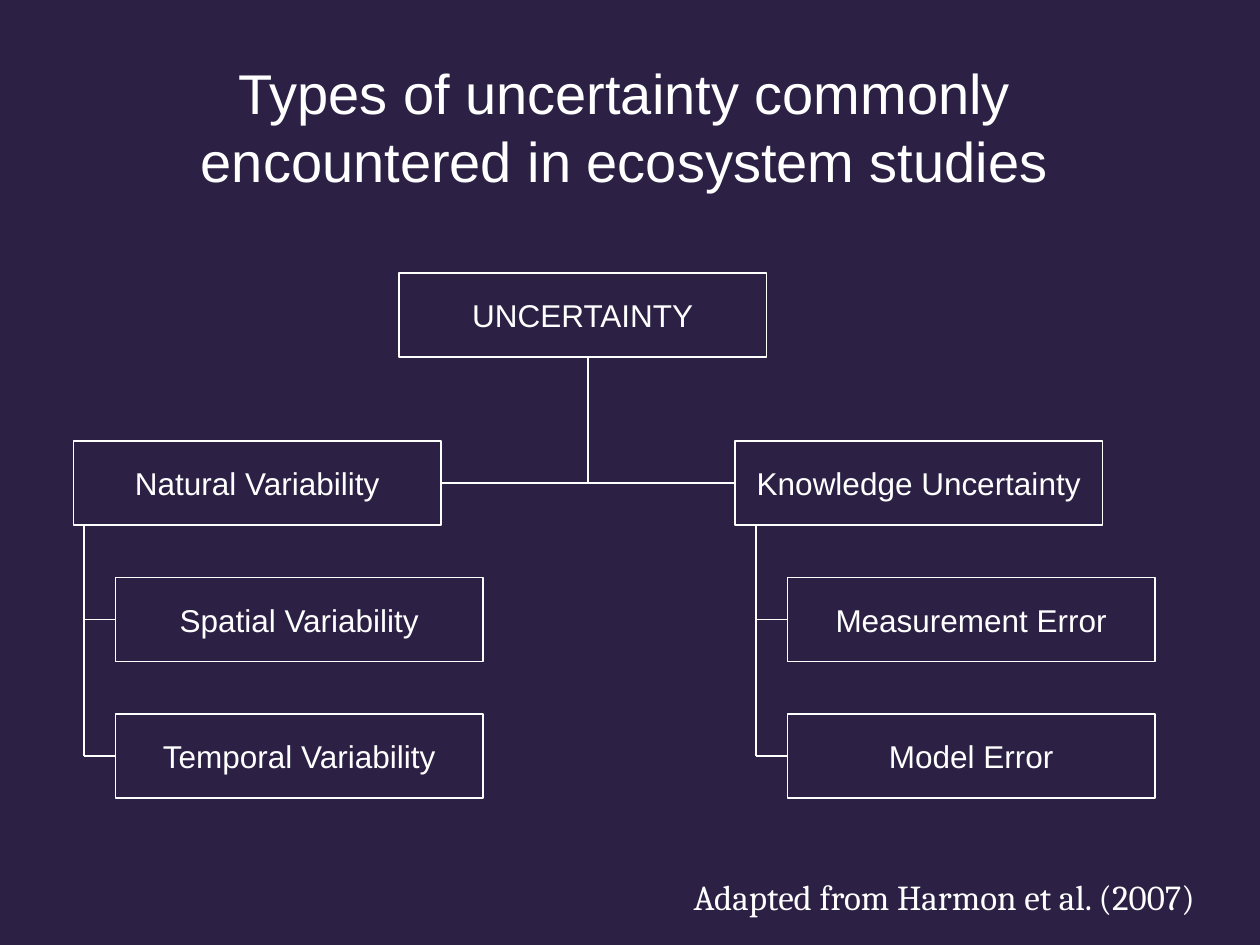
import pptx
import pptx.util
import pptx.dml.color
import pptx.enum.shapes
import pptx.enum.text
import pptx.oxml.ns
import lxml.etree
from dataclasses import dataclass

PX = 7620  # EMU per px, 120 px to the inch


@dataclass(frozen=True)
class Theme:
    background = pptx.dml.color.RGBColor(0x2C, 0x21, 0x45)
    foreground = pptx.dml.color.RGBColor(0xFF, 0xFF, 0xFF)
    line_width = pptx.util.Pt(0.75)
    sans = "Arial"
    serif = "Cambria"
    title_size = 32
    box_size = 18
    credit_size = 20


theme = Theme()
ALIGN = pptx.enum.text.PP_ALIGN
ANCHOR = pptx.enum.text.MSO_ANCHOR


def write_text(shape, text, size, font=theme.sans, align=ALIGN.CENTER,
               anchor=ANCHOR.TOP, wrap=True):
    frame = shape.text_frame
    frame.text = text
    frame.word_wrap = wrap
    frame.auto_size = pptx.enum.text.MSO_AUTO_SIZE.NONE
    frame.vertical_anchor = anchor
    paragraph = frame.paragraphs[0]
    paragraph.alignment = align
    paragraph.font.name = font
    paragraph.font.size = pptx.util.Pt(size)
    paragraph.font.color.rgb = theme.foreground


presentation = pptx.Presentation()
presentation.slide_width = 1200 * PX
presentation.slide_height = 900 * PX
slide = presentation.slides.add_slide(presentation.slide_layouts[5])
slide.background.fill.solid()
slide.background.fill.fore_color.rgb = theme.background

# Title
title = slide.shapes.title
title.left, title.top, title.width, title.height = 80 * PX, 50 * PX, 1030 * PX, 150 * PX
write_text(title, "Types of uncertainty commonly encountered in ecosystem studies",
           theme.title_size)

# Layout of the tree
BOX_WIDTH, BOX_HEIGHT = 350, 80
ROOT_LEFT, ROOT_TOP = 380, 260
BRANCH_TOP, ROW_STEP = 420, 130
TRUNK_X = 560
RAIL_GAP = 30  # from the vertical rail to the boxes it feeds

branches = [
    ("Natural Variability", 70, 110, ["Spatial Variability", "Temporal Variability"]),
    ("Knowledge Uncertainty", 700, 750, ["Measurement Error", "Model Error"]),
]

# Boxes and lines, worked out from the branches
branch_middle = BRANCH_TOP + BOX_HEIGHT // 2
boxes = [("UNCERTAINTY", ROOT_LEFT, ROOT_TOP)]
lines = [
    (TRUNK_X, ROOT_TOP + BOX_HEIGHT, TRUNK_X, branch_middle),
    (branches[0][1] + BOX_WIDTH, branch_middle, branches[1][1], branch_middle),
]
for name, branch_left, leaf_left, leaves in branches:
    boxes.append((name, branch_left, BRANCH_TOP))
    rail_x = leaf_left - RAIL_GAP
    for row, leaf in enumerate(leaves, start=1):
        leaf_top = BRANCH_TOP + row * ROW_STEP
        leaf_middle = leaf_top + BOX_HEIGHT // 2
        boxes.append((leaf, leaf_left, leaf_top))
        lines.append((rail_x, leaf_middle, leaf_left, leaf_middle))
    lines.append((rail_x, BRANCH_TOP + BOX_HEIGHT, rail_x, leaf_middle))

# Draw the boxes
for text, left, top in boxes:
    box = slide.shapes.add_shape(
        pptx.enum.shapes.MSO_SHAPE.FLOWCHART_PROCESS,
        left * PX, top * PX, BOX_WIDTH * PX, BOX_HEIGHT * PX)
    box.shadow.inherit = False
    box.fill.background()
    box.line.color.rgb = theme.foreground
    box.line.width = theme.line_width
    write_text(box, text, theme.box_size, anchor=ANCHOR.MIDDLE, wrap=False)

# Draw the lines
for ends in lines:
    connector = slide.shapes.add_connector(
        pptx.enum.shapes.MSO_CONNECTOR.STRAIGHT, *[end * PX for end in ends])
    connector.line.color.rgb = theme.foreground
    connector.line.width = theme.line_width
    lxml.etree.SubElement(connector._element.spPr, pptx.oxml.ns.qn("a:effectLst"))

# Source credit
credit = slide.shapes.add_textbox(470 * PX, 828 * PX, 680 * PX, 53 * PX)
write_text(credit, "Adapted from Harmon et al. (2007)", theme.credit_size,
           font=theme.serif, align=ALIGN.RIGHT)

presentation.save("out.pptx")
